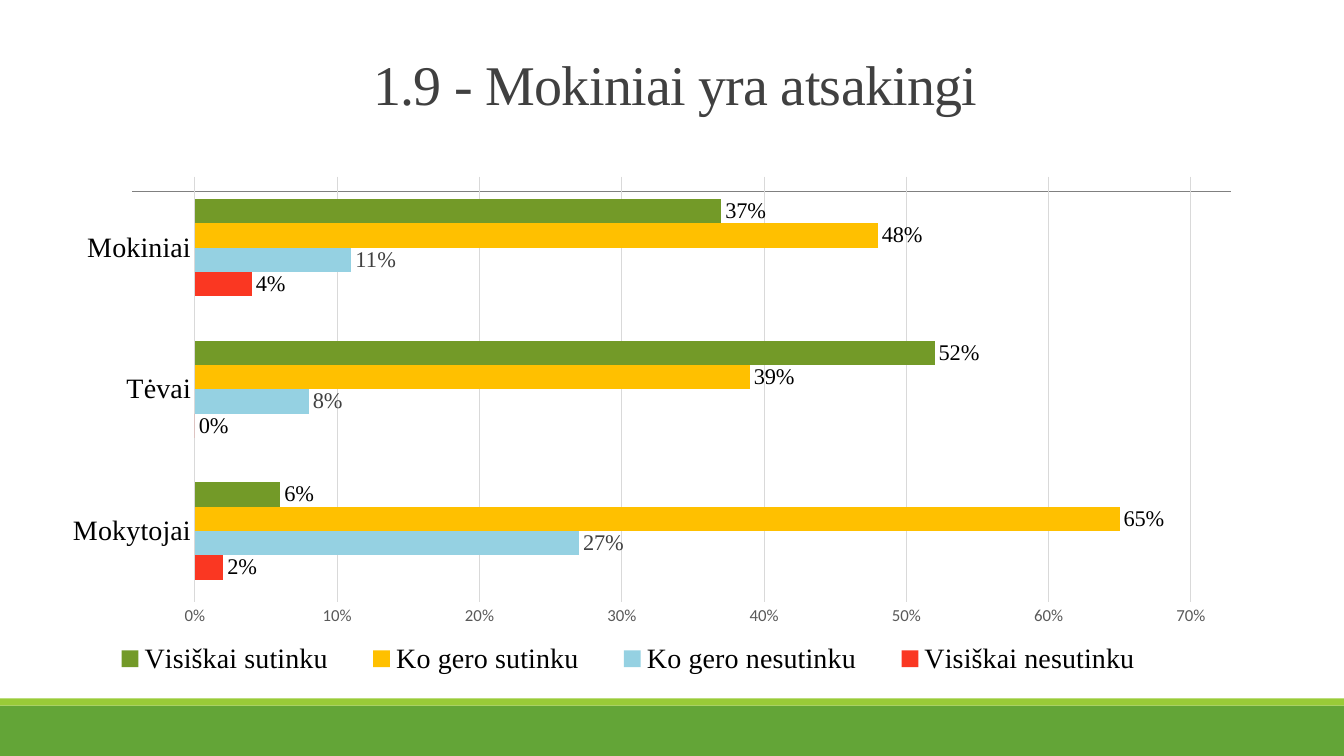
from lxml.etree import SubElement as Sub
from pptx import Presentation
from pptx.chart.data import CategoryChartData as Data
from pptx.dml.color import RGBColor
from pptx.enum.chart import XL_CHART_TYPE as Kind, XL_LABEL_POSITION as Spot
from pptx.enum.chart import XL_LEGEND_POSITION as Side, XL_TICK_MARK as Tick
from pptx.enum.shapes import MSO_CONNECTOR as Link, MSO_SHAPE as Form
from pptx.enum.text import MSO_ANCHOR as Anchor, PP_ALIGN as Align
from pptx.oxml import parse_xml
from pptx.oxml.ns import nsdecls, qn
from pptx.util import Inches, Pt

COLS, ROWS = 133.33, 75  # grid of tenth-inch cells
CATS = ["Mokytojai", "Tėvai", "Mokiniai"]
# Name, values, bar colour, label colour
ROWSET = [
    ("Visiškai nesutinku", (0.02, 0, 0.04), "FA3722", "000000"),
    ("Ko gero nesutinku", (0.27, 0.08, 0.11), "95D1E2", "404040"),
    ("Ko gero sutinku", (0.65, 0.39, 0.48), "FFC000", "000000"),
    ("Visiškai sutinku", (0.06, 0.52, 0.37), "739A28", "000000"),
]


def color(code):
    return RGBColor.from_string(code)


def cell(n):
    return Inches(n / 10)


def place(x, y, w, h, inner=False):
    """Manual chart layout, as shares of the chart frame."""
    kind = '<c:layoutTarget val="inner"/>' if inner else ""
    modes = '<c:xMode val="edge"/><c:yMode val="edge"/>'
    spots = "".join(f'<c:{k} val="{v}"/>' for k, v in zip("xywh", (x, y, w, h)))
    return parse_xml(f"<c:layout {nsdecls('c')}><c:manualLayout>{kind}{modes}"
                     f"{spots}</c:manualLayout></c:layout>")


class Deck:
    serif, sans, grey = "Times New Roman", "Calibri", "D9D9D9"

    def __init__(self):
        self.prs = Presentation()
        self.prs.slide_width, self.prs.slide_height = cell(COLS), cell(ROWS)
        self.slide = self.prs.slides.add_slide(self.prs.slide_layouts[5])
        self.shapes = self.slide.shapes

    def style(self, font, size, name, code):
        font.size, font.name, font.bold = Pt(size), name, False
        font.color.rgb = color(code)

    def stroke(self, line, code, width):
        line.color.rgb, line.width = color(code), Pt(width)

    def band(self, row, high, code):
        box = self.shapes.add_shape(Form.RECTANGLE, 0, cell(row), cell(COLS), cell(high))
        box.shadow.inherit = False
        box.fill.solid()
        box.fill.fore_color.rgb = color(code)
        box.line.fill.background()

    def rule(self, left, right, row):
        line = self.shapes.add_connector(Link.STRAIGHT, cell(left), cell(row),
                                         cell(right), cell(row))
        self.stroke(line.line, "808080", 0.5)
        Sub(line._element.spPr, qn("a:effectLst"))

    def title(self, text, *area):
        box = self.shapes.title
        box.left, box.top, box.width, box.height = map(cell, area)
        frame = box.text_frame
        frame.text = text
        frame.vertical_anchor = Anchor.BOTTOM
        para = frame.paragraphs[0]
        para.alignment, para.line_spacing = Align.CENTER, 0.85
        run = para.runs[0]
        self.style(run.font, 40, self.serif, "404040")
        run._r.get_or_add_rPr().set("spc", "-50")

    def bars(self, *area):
        data = Data(number_format="0%")
        data.categories = CATS
        for name, vals, *_ in ROWSET:
            data.add_series(name, vals)
        chart = self.shapes.add_chart(Kind.BAR_CLUSTERED, *map(cell, area), data).chart
        chart.has_title = False
        self.style(chart.font, 10, self.sans, "000000")
        plot = chart.plots[0]
        plot.gap_width, plot.overlap, plot.vary_by_categories = 182, 0, False

        # Bars and value labels
        for bar, (_, _, fill, ink) in zip(plot.series, ROWSET):
            bar.invert_if_negative = False
            bar.format.fill.solid()
            bar.format.fill.fore_color.rgb = color(fill)
            tag = bar.data_labels
            tag.show_value, tag.position = True, Spot.OUTSIDE_END
            tag.number_format, tag.number_format_is_linked = "0%", False
            self.style(tag.font, 16, self.serif, ink)

        # Axes
        cat, val = chart.category_axis, chart.value_axis
        for axis in (cat, val):
            axis.major_tick_mark = axis.minor_tick_mark = Tick.NONE
        self.style(cat.tick_labels.font, 20, self.serif, "000000")
        self.style(val.tick_labels.font, 12, self.sans, "595959")
        self.stroke(cat.format.line, self.grey, 0.75)
        self.stroke(val.major_gridlines.format.line, self.grey, 0.75)
        val.format.line.fill.background()
        val.minimum_scale, val.maximum_scale, val.major_unit = 0, 0.7, 0.1
        val.tick_labels.number_format = "0%"
        val.tick_labels.number_format_is_linked = False

        # Legend and layout
        chart.has_legend = True
        key = chart.legend
        key.position, key.include_in_layout = Side.BOTTOM, False
        self.style(key.font, 20, self.serif, "000000")
        spot = key._element
        for old in spot.findall(qn("c:layout")):
            spot.remove(old)
        spot.find(qn("c:legendPos")).addnext(place(0.03, 0.9, 0.92, 0.09))
        zone = chart._chartSpace.chart.plotArea
        for old in zone.findall(qn("c:layout")):
            zone.remove(old)
        zone.insert(0, place(0.1226, 0.02, 0.8445, 0.816, True))


def main():
    deck = Deck()
    # Footer bands and title rule
    deck.band(70, 5, "63A537")
    deck.band(69.3, 0.7, "99CB38")
    deck.rule(13.1, 122.1, 19)
    # Title and survey chart
    deck.title("1.9 - Mokiniai yra atsakingi", 12, 3.1, 110, 9)
    deck.bars(5, 16.5, 117, 51.7)
    deck.prs.save("out.pptx")


if __name__ == "__main__":
    main()
